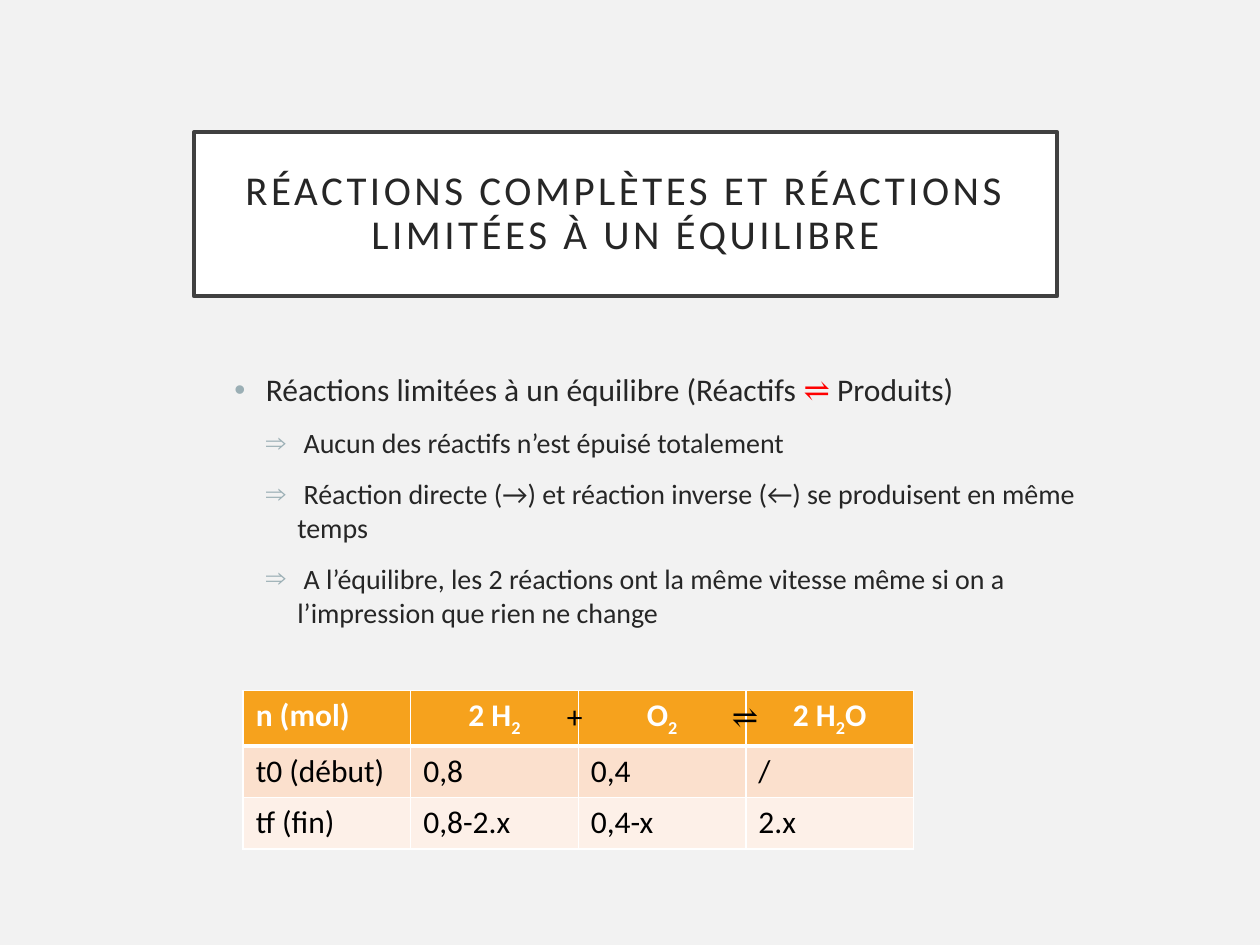
from dataclasses import dataclass
from itertools import product

from lxml.etree import SubElement
from pptx import Presentation
from pptx.dml.color import RGBColor
from pptx.enum.text import MSO_ANCHOR, MSO_AUTO_SIZE, PP_ALIGN
from pptx.oxml.ns import qn
from pptx.util import Inches, Pt

INK, BLACK, WHITE, RED = "262626", "000000", "FFFFFF", "FF0000"
BULLET, ORANGE = "9BAFB5", "F6A21D"
BANDS = ["FBE0CD", "FDF0E8"]
SYMBOL_FONT = "Times New Roman"
COLUMN, ROW = 1.33, 0.41
TABLE_LEFT, TABLE_TOP = 1.93, 5.48


@dataclass
class Piece:
    text: str
    color: str = INK
    font: str = "Calibri"


@dataclass
class Point:
    pieces: list[Piece]
    level: int = 0
    size: float = 16
    mark: str = "⇒"


@dataclass
class Sign:
    text: str
    left: float
    font: str = "Calibri"


POINTS = [
    Point([Piece("Réactions limitées à un équilibre (Réactifs "),
           Piece("⇌", RED, SYMBOL_FONT), Piece(" Produits)")], size=18, mark="•"),
    Point([Piece(" Aucun des réactifs n’est épuisé totalement")], level=1),
    Point([Piece(" Réaction directe (→) et réaction inverse (←) "
                 "se produisent en même temps")], level=1),
    Point([Piece(" A l’équilibre, les 2 réactions ont la même vitesse "
                 "même si on a l’impression que rien ne change")], level=1),
]
AMOUNTS = [
    ["n (mol)", "2 H_2", "O_2", "2 H_2_O"],
    ["t0 (début)", "0,8", "0,4", "/"],
    ["tf (fin)", "0,8-2.x", "0,4-x", "2.x"],
]
SIGNS = [Sign("+", 4.4), Sign("⇌", 5.71, SYMBOL_FONT)]


def rgb(color: str) -> RGBColor:
    return RGBColor.from_string(color)


def place(shape, left: float, top: float, width: float, height: float) -> None:
    shape.left, shape.top = Inches(left), Inches(top)
    shape.width, shape.height = Inches(width), Inches(height)


def write(paragraph, text: str, *, size: float = 18, color: str = INK,
          font: str = "Calibri", bold: bool = False,
          spacing: float = 0, baseline: int = 0) -> None:
    run = paragraph.add_run()
    run.text = text
    run.font.size, run.font.name, run.font.bold = Pt(size), font, bold
    run.font.color.rgb = rgb(color)
    properties = run._r.get_or_add_rPr()
    if spacing:
        properties.set("spc", str(round(spacing * 100)))
    if baseline:
        properties.set("baseline", str(baseline * 1000))


def add_bullet(paragraph, mark: str, indent: float) -> None:
    properties = paragraph._p.get_or_add_pPr()
    properties.set("marL", str(Inches(indent)))
    properties.set("indent", str(Inches(-0.25)))
    tint = SubElement(properties, qn("a:buClr"))
    SubElement(tint, qn("a:srgbClr"), val=BULLET)
    SubElement(properties, qn("a:buFont"), typeface="Arial")
    SubElement(properties, qn("a:buChar"), char=mark)


def add_borders(cell, header: bool) -> None:
    properties = cell._tc.get_or_add_tcPr()
    for side in ("L", "R", "T", "B"):
        width = 3 if header and side == "B" else 1
        line = SubElement(properties, qn(f"a:ln{side}"), w=str(Pt(width)))
        fill = SubElement(line, qn("a:solidFill"))
        SubElement(fill, qn("a:srgbClr"), val=WHITE)


def fill_title(title) -> None:
    place(title, 1.54, 1.05, 6.85, 1.3)
    title.fill.solid()
    title.fill.fore_color.rgb = rgb(WHITE)
    title.line.color.rgb = rgb("404040")
    title.line.width = Pt(2.5)
    frame = title.text_frame
    frame.auto_size, frame.vertical_anchor = MSO_AUTO_SIZE.NONE, MSO_ANCHOR.MIDDLE
    frame.margin_left = frame.margin_right = Inches(0.2)
    frame.margin_top = frame.margin_bottom = Inches(0.2)
    heading = frame.paragraphs[0]
    heading.alignment, heading.line_spacing = PP_ALIGN.CENTER, 0.9
    write(heading, "RÉACTIONS COMPLÈTES ET RÉACTIONS LIMITÉES À UN ÉQUILIBRE",
          size=23.4, spacing=2)


def fill_points(body, points: list[Point]) -> None:
    place(body, 1.76, 2.89, 7.18, 3.39)
    frame = body.text_frame
    frame.auto_size = MSO_AUTO_SIZE.NONE
    for index, point in enumerate(points):
        paragraph = frame.add_paragraph() if index else frame.paragraphs[0]
        paragraph.level, paragraph.space_before = point.level, Pt(10)
        add_bullet(paragraph, point.mark, 0.25 * (point.level + 1))
        for piece in point.pieces:
            write(paragraph, piece.text, size=point.size,
                  color=piece.color, font=piece.font)


def add_amounts(slide, amounts: list[list[str]]) -> None:
    rows, columns = len(amounts), len(amounts[0])
    table = slide.shapes.add_table(
        rows, columns, Inches(TABLE_LEFT), Inches(TABLE_TOP),
        Inches(COLUMN * columns), Inches(ROW * rows)).table
    for row, column in product(range(rows), range(columns)):
        header = row == 0
        cell = table.cell(row, column)
        add_borders(cell, header)
        cell.fill.solid()
        cell.fill.fore_color.rgb = rgb(ORANGE if header else BANDS[row - 1])
        paragraph = cell.text_frame.paragraphs[0]
        if header and column:
            paragraph.alignment = PP_ALIGN.CENTER
        for index, part in enumerate(amounts[row][column].split("_")):
            write(paragraph, part, color=WHITE if header else BLACK,
                  bold=header, baseline=-25 if index % 2 else 0)


def add_sign(slide, sign: Sign) -> None:
    box = slide.shapes.add_textbox(
        Inches(sign.left), Inches(TABLE_TOP), Inches(0.24), Inches(0.42))
    box.text_frame.word_wrap = True
    write(box.text_frame.paragraphs[0], sign.text, color=BLACK, font=sign.font)


def main() -> None:
    deck = Presentation()
    deck.slide_width, deck.slide_height = Inches(10), Inches(7.5)
    slide = deck.slides.add_slide(deck.slide_layouts[1])
    slide.background.fill.solid()
    slide.background.fill.fore_color.rgb = rgb("F2F2F2")
    fill_title(slide.shapes.title)
    fill_points(slide.placeholders[1], POINTS)
    add_amounts(slide, AMOUNTS)
    for sign in SIGNS:
        add_sign(slide, sign)
    deck.save("out.pptx")


if __name__ == "__main__":
    main()
